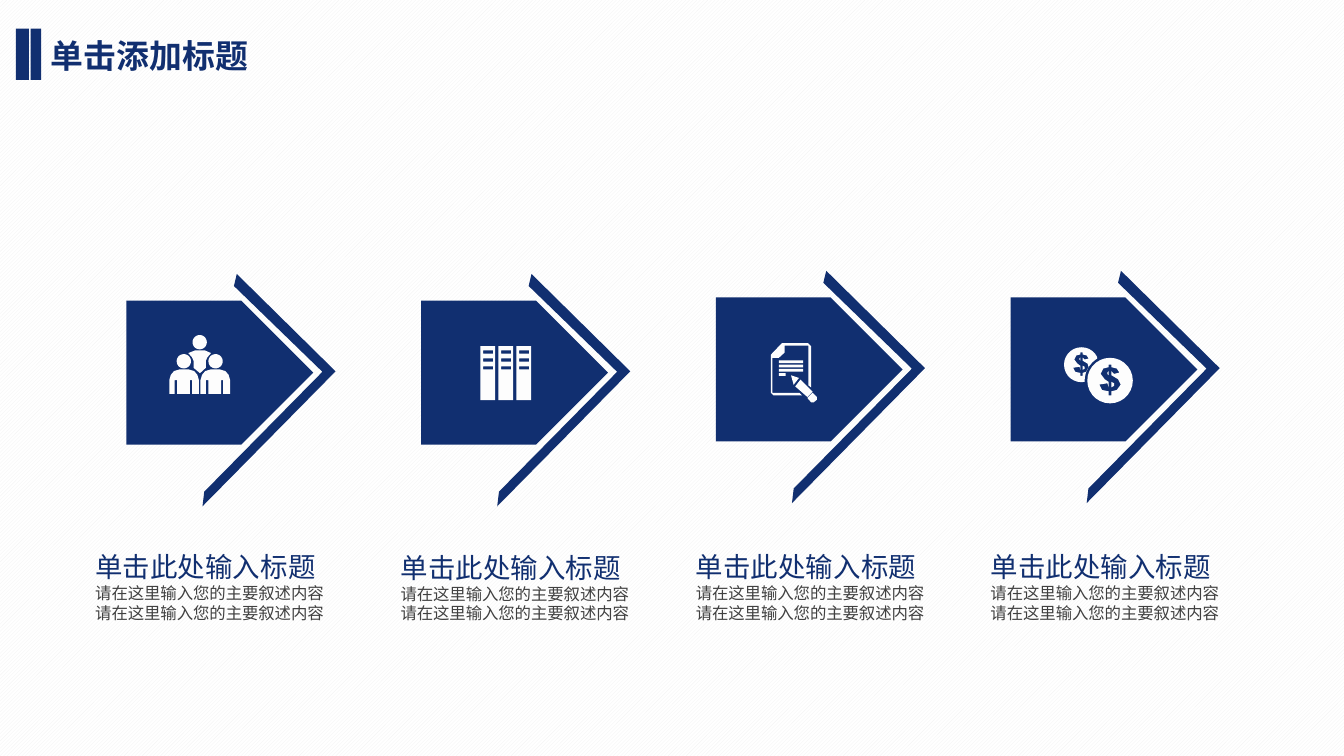
from dataclasses import dataclass
from math import cos, hypot, sin, tau

from pptx import Presentation
from pptx.dml.color import RGBColor
from pptx.enum.dml import MSO_PATTERN
from pptx.enum.shapes import MSO_SHAPE
from pptx.util import Cm, Pt


@dataclass(frozen=True)
class Theme:
    navy: RGBColor = RGBColor(0x11, 0x2F, 0x70)
    light: RGBColor = RGBColor(0xFD, 0xFD, 0xFD)
    grey: RGBColor = RGBColor(0x40, 0x40, 0x40)
    hatch: RGBColor = RGBColor(0xF2, 0xF2, 0xF2)
    white: RGBColor = RGBColor(0xFF, 0xFF, 0xFF)
    font: str = "Noto Sans CJK SC"
    title: float = 17.6
    head: float = 14.7
    body: float = 8.8


theme = Theme()
deck = Presentation()
deck.slide_width, deck.slide_height = Cm(25.4), Cm(14.28)
slide = deck.slides.add_slide(deck.slide_layouts[6])
fill = slide.background.fill
fill.patterned()
fill.pattern = MSO_PATTERN.LIGHT_UPWARD_DIAGONAL
fill.fore_color.rgb = theme.hatch
fill.back_color.rgb = theme.white


def draw(shapes, kind, left, top, width, height, color):
    """Add a preset shape; or, if kind is a list of closed outlines,
    one freeform whose inner outlines are holes."""
    if isinstance(kind, list):
        rings = [[(Cm(left + x), Cm(top + y)) for x, y in ring] for ring in kind]
        pen = shapes.build_freeform(*rings[0][0])
        for i, ring in enumerate(rings):
            if i:
                pen.move_to(*ring[0])
            pen.add_line_segments(ring[1:], close=True)
        shape = pen.convert_to_shape()
    else:
        shape = shapes.add_shape(kind, Cm(left), Cm(top), Cm(width), Cm(height))
    shape.shadow.inherit = False
    shape.fill.solid()
    shape.fill.fore_color.rgb = color
    shape.line.fill.background()
    return shape


def trace(x, y, width, height, round=False):
    """Return the points of a box, or of the oval within it."""
    if not round:
        return [(x, y), (x + width, y), (x + width, y + height), (x, y + height)]
    turns = [tau * i / 28 for i in range(28)]
    return [(x + width * (1 + cos(t)) / 2, y + height * (1 + sin(t)) / 2) for t in turns]


# Icons, measured from the corner of their arrow
torso = [(1.17, 0.99), (1.3, 0.94), (1.48, 0.94), (1.6, 0.99), (1.53, 1.07),
         (1.5, 1.14), (1.5, 1.27), (1.39, 1.37), (1.27, 1.27), (1.27, 1.14),
         (1.24, 1.07)]
trunk = [(0, 0.46), (0, 0.2), (0.03, 0.1), (0.09, 0.03), (0.19, 0),
         (0.37, 0), (0.47, 0.03), (0.53, 0.1), (0.56, 0.2), (0.56, 0.46),
         (0.43, 0.46), (0.43, 0.2), (0.39, 0.2), (0.39, 0.46),
         (0.15, 0.46), (0.15, 0.2), (0.1, 0.2), (0.1, 0.46)]
team = [torso]
for x, y in [(0.95, 1.01), (1.25, 0.65), (1.55, 1.01)]:
    team.append(trace(x, y, 0.27, 0.27, True))
for left in (0.81, 1.4):
    team.append([(left + x, 1.3 + y) for x, y in trunk])

files = []
for col in range(3):
    x = 1.12 + 0.34 * col
    files.append(trace(x, 0.86, 0.28, 1.02))
    for row in range(3):
        files.append(trace(x + 0.05, 0.94 + 0.15 * row, 0.19, 0.06))

page = [(1.8, 1.7), (1.8, 0.92), (1.74, 0.86), (1.25, 0.86), (1.04, 1.08),
        (1.04, 1.8), (1.09, 1.85), (1.63, 1.85), (1.58, 1.8), (1.07, 1.8),
        (1.07, 1.14), (1.19, 1.14), (1.3, 1.04), (1.3, 0.91), (1.75, 0.91),
        (1.75, 1.66)]
tip = [(1.42, 1.47), (1.57, 1.52), (1.47, 1.65)]
shaft = [(1.6, 1.55), (1.83, 1.78), (1.73, 1.88), (1.5, 1.68)]
end = [(1.83, 1.8), (1.91, 1.88), (1.91, 1.93),
       (1.85, 1.98), (1.8, 1.98), (1.73, 1.9)]
memo = [page, tip, shaft, end]
for row, width in enumerate([0.46, 0.46, 0.46, 0.13]):
    memo.append(trace(1.19, 1.19 + 0.08 * row, width, 0.05))

# The dollar sign is set on a grid of 34 units to the coin's width
dollar = [(7, -6), (3, -5), (1, -7), (1, -4), (6, -1), (8, 3), (5, 7), (1, 8),
          (1, 11), (-1, 11), (-1, 8), (-6, 7), (-8, 3), (-2, 2), (-1, 5),
          (-1, 1), (-4, -1), (-7, -5), (-5, -9), (-1, -10), (-1, -12),
          (1, -12), (1, -10), (5, -9)]
gaps = [[(1, 1), (3, 2), (3, 4), (1, 5)], [(-1, -7), (-2, -6), (-2, -5), (-1, -4)]]
coins = []
for x, y, size, edge in [(1.01, 0.94, 0.66, 0.48), (1.45, 1.14, 0.86, 0)]:
    coins.append(trace(x, y, size, size, True))
    for part in [dollar, *gaps]:
        coins.append([(x + size * (0.5 + u / 34), y + size * (0.5 + v / 34))
                      for u, v in part])
    # Points of the rear coin hidden by the front one move out to its edge
    for ring in coins:
        for i, (u, v) in enumerate(ring):
            gap = hypot(u - 1.88, v - 1.57)
            if gap < edge:
                ring[i] = (1.88 + (u - 1.88) * edge / gap,
                           1.57 + (v - 1.57) * edge / gap)

# Title bars
for left, width in [(0.3, 0.25), (0.58, 0.2)]:
    draw(slide.shapes, MSO_SHAPE.RECTANGLE, left, 0.54, width, 0.97, theme.navy)

# Arrows: a turned chevron along the point of a pentagon
chevron = [(0, 0), (3.58, 0), (3.36, 0.17), (0.18, 0.17), (0.2, 2.5), (0, 2.62)]
tops = [5.68, 5.68, 5.62, 5.62]
for i, (top, icon) in enumerate(zip(tops, [team, files, memo, coins])):
    left = 2.39 + 5.57 * i
    shapes = slide.shapes.add_group_shape().shapes
    wing = draw(shapes, [chevron], left - 0.03, top + 0.38, 0, 0, theme.navy)
    wing.rotation = 134.6
    draw(shapes, MSO_SHAPE.PENTAGON, left, top, 3.53, 2.72, theme.navy)
    draw(shapes, icon, left, top, 0, 0, theme.light)

# Title and captions
note = ("请在这里输入您的主要叙述内容", theme.body, theme.grey, False)
lines = [("单击此处输入标题", theme.head, theme.navy, False), note, note]
title = [("单击添加标题", theme.title, theme.navy, True)]
boxes = [(0.71, 0.54, 6.15, 1.02, True, title)]
for x, y in [(1.55, 10.27), (7.32, 10.28), (12.9, 10.27), (18.47, 10.27)]:
    boxes.append((x, y, 4.93, 2.64, False, lines))
for x, y, width, height, wrap, rows in boxes:
    frame = slide.shapes.add_textbox(Cm(x), Cm(y), Cm(width), Cm(height)).text_frame
    frame.word_wrap = wrap
    for i, (words, size, color, bold) in enumerate(rows):
        para = frame.add_paragraph() if i else frame.paragraphs[0]
        run = para.add_run()
        run.text = words
        run.font.name = theme.font
        run.font.size = Pt(size)
        run.font.bold = bold
        run.font.color.rgb = color

deck.save("out.pptx")
